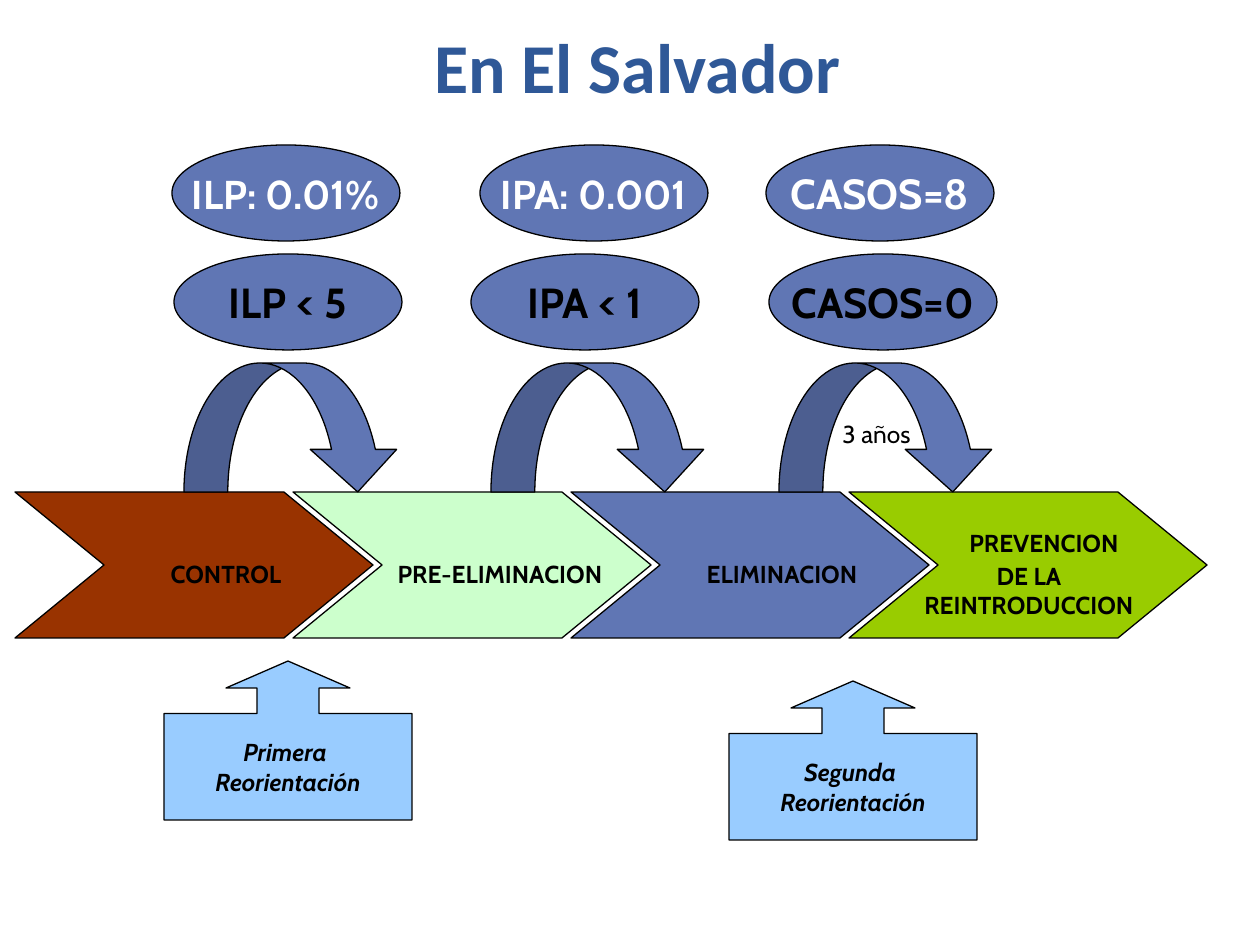
from pptx import Presentation
from pptx.dml.color import RGBColor
from pptx.enum.shapes import MSO_SHAPE
from pptx.enum.text import MSO_ANCHOR, MSO_AUTO_SIZE, PP_ALIGN
from pptx.util import Pt

COLORS = {
    "title": "2F5897",
    "black": "000000",
    "white": "FFFFFF",
    "blue": "6076B4",
    "brown": "993300",
    "mint": "CCFFCC",
    "green": "99CC00",
    "sky": "99CCFF",
}
PX_PER_INCH = 126
CHEVRON_PITCH = 278


def px(n):
    return round(n * 914400 / PX_PER_INCH)


def rgb(name):
    return RGBColor.from_string(COLORS[name])


def write(tf, lines, size, color="black", font="Cabin", bold=True, italic=False):
    """Put one centred paragraph per line into the text frame."""
    tf.word_wrap = False
    for i, line in enumerate(lines):
        p = tf.paragraphs[0] if i == 0 else tf.add_paragraph()
        p.text = line
        p.alignment = PP_ALIGN.CENTER
        p.font.name = font
        p.font.size = Pt(size)
        p.font.bold = bold
        p.font.italic = italic
        p.font.color.rgb = rgb(color)


def add_block(slide, kind, box, fill, adjustments=()):
    sp = slide.shapes.add_shape(kind, *map(px, box))
    sp.shadow.inherit = False
    sp.fill.solid()
    sp.fill.fore_color.rgb = rgb(fill)
    sp.line.color.rgb = rgb("black")
    sp.line.width = Pt(0.75)
    for i, value in enumerate(adjustments):
        sp.adjustments[i] = value
    sp.text_frame.vertical_anchor = MSO_ANCHOR.MIDDLE
    return sp


def add_title(slide, text):
    sp = slide.shapes.title
    sp.left, sp.top, sp.width, sp.height = map(px, (15, 0, 1245, 116))
    tf = sp.text_frame
    write(tf, [text], 40, "title", "Calibri")
    tf.word_wrap = True
    tf.vertical_anchor = MSO_ANCHOR.TOP
    tf.paragraphs[0].line_spacing = Pt(58)


def add_stage(slide, index, lines, fill, shift):
    """Add a chevron whose text sits shift px right of its centre."""
    box = (15 + CHEVRON_PITCH * index, 492, 358, 146)
    sp = add_block(slide, MSO_SHAPE.CHEVRON, box, fill, [0.61])
    tf = sp.text_frame
    tf.margin_left, tf.margin_top = px(2 * shift), px(18)
    tf.margin_right = tf.margin_bottom = 0
    write(tf, lines, 14)
    return sp


def add_jump(slide, left):
    add_block(slide, MSO_SHAPE.CURVED_DOWN_ARROW, (left, 363, 217, 129),
              "blue", [0.34, 0.67, 0.33])


def add_callout(slide, left, top, lines):
    sp = add_block(slide, MSO_SHAPE.UP_ARROW_CALLOUT, (left, top, 248, 159),
                   "sky", [0.39, 0.39, 0.17, 0.67])
    write(sp.text_frame, lines, 14, italic=True)


def add_indicator(slide, left, top, text, size, color):
    sp = add_block(slide, MSO_SHAPE.OVAL, (left, top, 228, 96), "blue")
    write(sp.text_frame, [text], size, color)


def add_label(slide, box, text):
    tf = slide.shapes.add_textbox(*map(px, box)).text_frame
    write(tf, [text], 14, bold=False)
    tf.auto_size = MSO_AUTO_SIZE.SHAPE_TO_FIT_TEXT


def main():
    prs = Presentation()
    prs.slide_width, prs.slide_height = px(1260), px(945)
    slide = prs.slides.add_slide(prs.slide_layouts[5])
    add_title(slide, "En El Salvador")

    stages = [
        (["CONTROL"], "brown", 32),
        (["PRE-ELIMINACION"], "mint", 28),
        (["ELIMINACION"], "blue", 32),
        (["PREVENCION", "DE LA", "REINTRODUCCION"], "green", 1),
    ]
    for i, (lines, fill, shift) in enumerate(stages):
        last = add_stage(slide, i, lines, fill, shift)
    first_line = last.text_frame.paragraphs[0]
    first_line.space_after = Pt(2)
    first_line._p.get_or_add_pPr().set("marL", str(px(30)))

    for left in (184, 491, 779):
        add_jump(slide, left)
    add_label(slide, (828, 413, 97, 42), "3 años")

    add_callout(slide, 164, 661, ["Primera ", "Reorientación"])
    add_callout(slide, 729, 681, ["Segunda ", "Reorientación"])

    for left, text, size in [(172, "ILP: 0.01%", 23), (480, "IPA: 0.001", 23),
                             (766, "CASOS=8", 24)]:
        add_indicator(slide, left, 145, text, size, "white")
    for left, text in [(174, "ILP < 5"), (471, "IPA < 1"), (769, "CASOS=0")]:
        add_indicator(slide, left, 254, text, 24, "black")

    prs.save("out.pptx")


if __name__ == "__main__":
    main()
